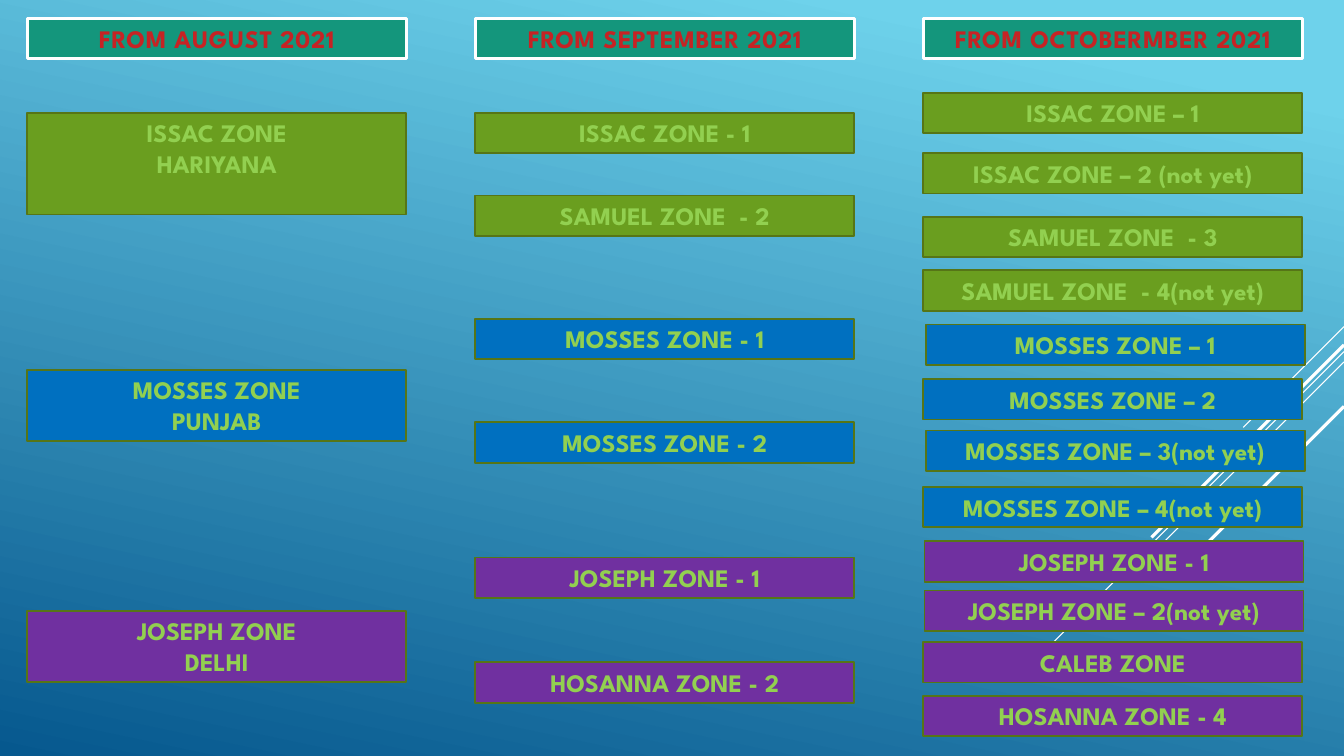
import pptx
import pptx.util
import pptx.dml.color
import pptx.enum.shapes
import pptx.enum.text
import pptx.oxml
import pptx.oxml.ns

Cm = pptx.util.Cm
Pt = pptx.util.Pt

FONT = "League Spartan"
GREEN, BLUE, PLUM = "6A9E1F", "0070C0", "7030A0"
EDGE = "567517"

HEADS = ["FROM AUGUST 2021", "FROM SEPTEMBER 2021", "FROM OCTOBERMBER 2021"]

# text, fill, top, height, shift
ZONES = [
    [
        ("ISSAC ZONE\nHARIYANA", GREEN, 2.84, 2.57, 0),
        ("MOSSES ZONE\nPUNJAB", BLUE, 9.32, 1.8, 0),
        ("JOSEPH ZONE\nDELHI", PLUM, 15.39, 1.8, 0),
    ],
    [
        ("ISSAC ZONE - 1", GREEN, 2.84, 1.02, 0),
        ("SAMUEL ZONE  - 2", GREEN, 4.93, 1.02, 0),
        ("MOSSES ZONE - 1", BLUE, 8.03, 1.02, 0),
        ("MOSSES ZONE - 2", BLUE, 10.64, 1.02, 0),
        ("JOSEPH ZONE - 1", PLUM, 14.05, 1.02, 0),
        ("HOSANNA ZONE - 2", PLUM, 16.69, 1.02, 0),
    ],
    [
        ("ISSAC ZONE – 1", GREEN, 2.34, 1.02, 0),
        ("ISSAC ZONE – 2 (not yet)", GREEN, 3.86, 1.02, 0),
        ("SAMUEL ZONE  - 3", GREEN, 5.46, 1.02, 0),
        ("SAMUEL ZONE  - 4(not yet)", GREEN, 6.81, 1.02, 0),
        ("MOSSES ZONE – 1", BLUE, 8.18, 1.02, 0.06),
        ("MOSSES ZONE – 2", BLUE, 9.55, 1.02, 0),
        ("MOSSES ZONE – 3(not yet)", BLUE, 10.85, 1.02, 0.06),
        ("MOSSES ZONE – 4(not yet)", BLUE, 12.27, 1.02, 0),
        ("JOSEPH ZONE - 1", PLUM, 13.64, 1.02, 0.03),
        ("JOSEPH ZONE – 2(not yet)", PLUM, 14.88, 1.02, 0.03),
        ("CALEB ZONE", PLUM, 16.18, 1.02, 0),
        ("HOSANNA ZONE - 4", PLUM, 17.53, 1.02, 0),
    ],
]

RAYS = [(8.23, 2.54, 0.75), (8.86, 8.28, 0.75), (9.12, 5.26, 0.75),
        (8.69, 4.85, 2.25), (10.24, 3.53, 2.25)]

WIDE, HIGH = 33.87, 19.05
LEFT, STEP, BOX = 0.69, 11.29, 9.55


def tint(code):
    return pptx.dml.color.RGBColor.from_string(code)


def trim(run, code):
    line = pptx.oxml.parse_xml(
        f'<a:ln {pptx.oxml.ns.nsdecls("a")} w="9525"><a:solidFill>'
        f'<a:srgbClr val="{code}"/></a:solidFill></a:ln>')
    run.font._element.insert(0, line)


def add_box(text, fill, left, top, high, edge, width, ink, rim, gap=0):
    box = slide.shapes.add_shape(
        pptx.enum.shapes.MSO_SHAPE.RECTANGLE, Cm(left), Cm(top), Cm(BOX), Cm(high))
    box.shadow.inherit = False
    box.fill.solid()
    box.fill.fore_color.rgb = tint(fill)
    box.line.color.rgb = tint(edge)
    box.line.width = Pt(width)
    frame = box.text_frame
    frame.word_wrap = True
    frame.vertical_anchor = pptx.enum.text.MSO_ANCHOR.TOP
    for i, part in enumerate(text.split("\n")):
        para = frame.add_paragraph() if i else frame.paragraphs[0]
        para.alignment = pptx.enum.text.PP_ALIGN.CENTER
        run = para.add_run()
        run.text = part
        run.font.name = FONT
        run.font.size = Pt(18)
        run.font.bold = True
        run.font.color.rgb = tint(ink)
        trim(run, rim)
        if gap:
            run.font._element.set("spc", str(gap))


def add_ray(top, run, width):
    ray = slide.shapes.add_connector(
        pptx.enum.shapes.MSO_CONNECTOR.STRAIGHT,
        Cm(WIDE), Cm(top), Cm(WIDE - run), Cm(top + run))
    ray.line.color.rgb = tint("FFFFFF")
    ray.line.width = Pt(width)
    ray._element.spPr.append(pptx.oxml.parse_xml(
        f'<a:effectLst {pptx.oxml.ns.nsdecls("a")}/>'))


deck = pptx.Presentation()
deck.slide_width, deck.slide_height = Cm(WIDE), Cm(HIGH)
slide = deck.slides.add_slide(deck.slide_layouts[6])

back = slide.background.fill
back.gradient()
back.gradient_angle = 258
for stop, (place, code) in zip(back.gradient_stops, [(0.1, "6ED2EB"), (1, "06588E")]):
    stop.position = place
    stop.color.rgb = tint(code)

for ray in RAYS:
    add_ray(*ray)

for col, (head, zones) in enumerate(zip(HEADS, ZONES)):
    left = LEFT + col * STEP
    add_box(head, "14967C", left, 0.46, 1.02, "FFFFFF", 2.25, "C62324", "052F61", 50)
    for text, fill, top, high, shift in zones:
        add_box(text, fill, left + shift, top, high, EDGE, 1.25, "92D050", "000000")

deck.save("out.pptx")
